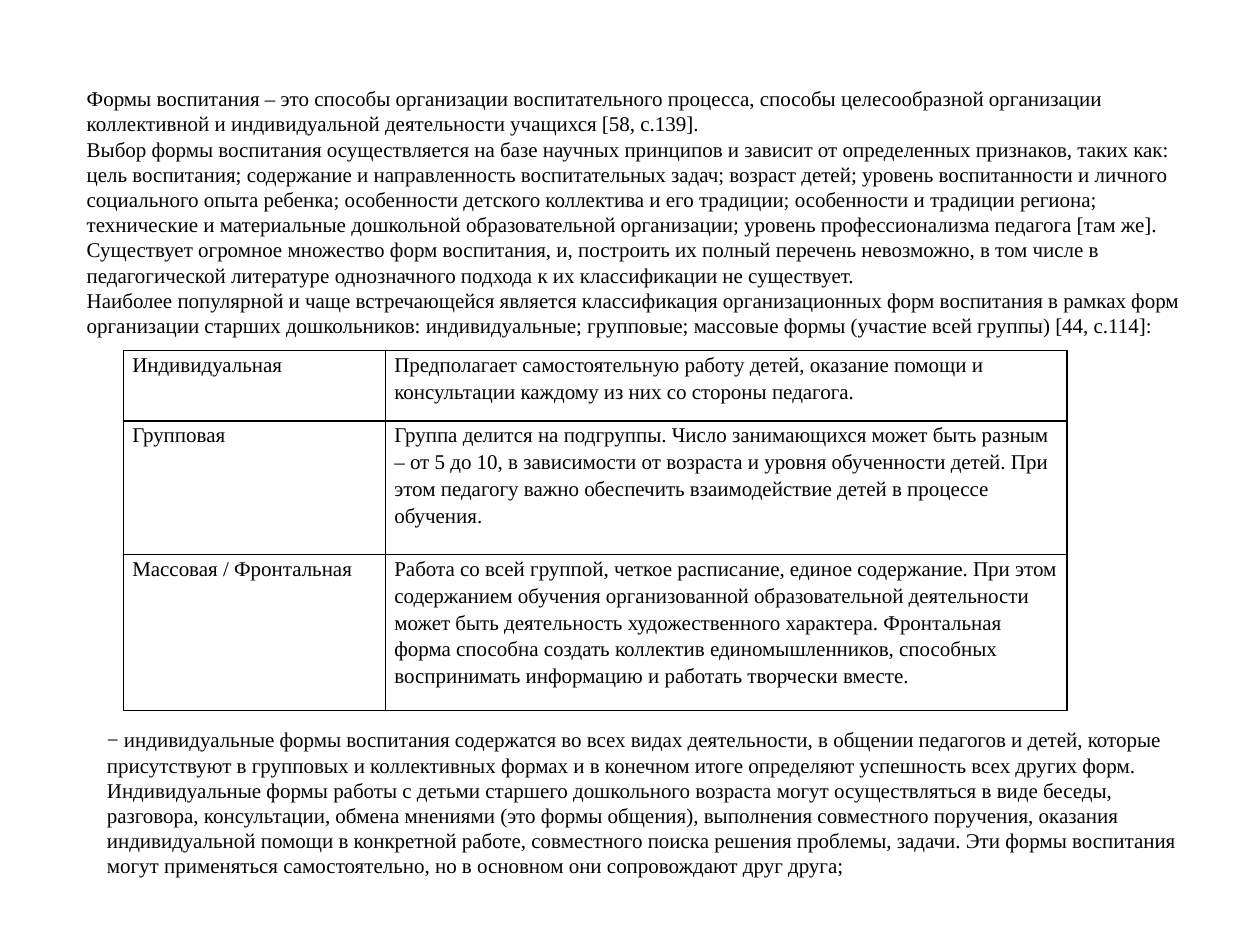
from dataclasses import dataclass

from lxml.etree import SubElement
from pptx import Presentation
from pptx.dml.color import RGBColor
from pptx.enum.text import MSO_ANCHOR, MSO_AUTO_SIZE
from pptx.oxml.ns import qn
from pptx.util import Inches, Pt


@dataclass(frozen=True)
class Theme:
    """Hold the colours, font and sizes of the slide."""

    font: str = "Times New Roman"
    size: float = 12
    ink: str = "000000"
    border_width: float = 1
    table_spacing: float = 1.15


THEME = Theme()

INTRODUCTION = [
    "Формы воспитания – это способы организации воспитательного процесса, способы целесообразной "
    "организации коллективной и индивидуальной деятельности учащихся [58, с.139].",
    "Выбор формы воспитания осуществляется на базе научных принципов и зависит от определенных "
    "признаков, таких как: цель воспитания; содержание и направленность воспитательных задач; "
    "возраст детей; уровень воспитанности и личного социального опыта ребенка; особенности "
    "детского коллектива и его традиции; особенности и традиции региона; технические и "
    "материальные дошкольной образовательной организации; уровень профессионализма педагога "
    "[там же].",
    "Существует огромное множество форм воспитания, и, построить их полный перечень невозможно, "
    "в том числе в педагогической литературе однозначного подхода к их классификации не существует.",
    "Наиболее популярной и чаще встречающейся является классификация организационных форм "
    "воспитания в рамках форм организации старших дошкольников: индивидуальные; групповые; "
    "массовые формы (участие всей группы) [44, с.114]:",
]

FORMS = [
    (
        "Индивидуальная",
        "Предполагает самостоятельную работу детей, оказание помощи и консультации каждому из них "
        "со стороны педагога.",
    ),
    (
        "Групповая",
        "Группа делится на подгруппы. Число занимающихся может быть разным – от 5 до 10, в "
        "зависимости от возраста и уровня обученности детей. При этом педагогу важно обеспечить "
        "взаимодействие детей в процессе обучения.",
    ),
    (
        "Массовая / Фронтальная",
        "Работа со всей группой, четкое расписание, единое содержание. При этом содержанием "
        "обучения организованной образовательной деятельности может быть деятельность "
        "художественного характера. Фронтальная форма способна создать коллектив "
        "единомышленников, способных воспринимать информацию и работать творчески вместе.",
    ),
]
COLUMN_WIDTHS = [2.08, 5.41]
ROW_HEIGHTS = [0.56, 1.06, 1.24]

CONCLUSION = [
    "− индивидуальные формы воспитания содержатся во всех видах деятельности, в общении педагогов "
    "и детей, которые присутствуют в групповых и коллективных формах и в конечном итоге "
    "определяют успешность всех других форм. Индивидуальные формы работы с детьми старшего "
    "дошкольного возраста могут осуществляться в виде беседы, разговора, консультации, обмена "
    "мнениями (это формы общения), выполнения совместного поручения, оказания индивидуальной "
    "помощи в конкретной работе, совместного поиска решения проблемы, задачи. Эти формы "
    "воспитания могут применяться самостоятельно, но в основном они сопровождают друг друга;",
]


def write_text(paragraph, text, *, size=THEME.size, color=THEME.ink, line_spacing=None):
    """Write one formatted run of text into a paragraph."""
    run = paragraph.add_run()
    run.text = text
    run.font.name = THEME.font
    run.font.size = Pt(size)
    run.font.color.rgb = RGBColor.from_string(color)
    if line_spacing:
        paragraph.line_spacing = line_spacing


def add_text_box(slide, left, top, width, height, texts, anchor=MSO_ANCHOR.TOP):
    """Add a wrapped text box with one paragraph per text."""
    shape = slide.shapes.add_textbox(Inches(left), Inches(top), Inches(width), Inches(height))
    frame = shape.text_frame
    frame.word_wrap = True
    frame.auto_size = MSO_AUTO_SIZE.SHAPE_TO_FIT_TEXT
    frame.vertical_anchor = anchor
    for index, text in enumerate(texts):
        paragraph = frame.add_paragraph() if index else frame.paragraphs[0]
        write_text(paragraph, text)


def set_borders(cell):
    """Draw a solid line on every side of a cell."""
    properties = cell._tc.get_or_add_tcPr()
    for position, side in enumerate(("lnL", "lnR", "lnT", "lnB")):
        line = SubElement(properties, qn(f"a:{side}"), w=str(Pt(THEME.border_width)))
        fill = SubElement(line, qn("a:solidFill"))
        SubElement(fill, qn("a:srgbClr"), val=THEME.ink)
        properties.insert(position, line)


def fill_cell(cell, text):
    """Format a table cell and write its text."""
    cell.margin_left = cell.margin_right = Inches(0.07)
    cell.margin_top = cell.margin_bottom = 0
    cell.fill.background()
    set_borders(cell)
    write_text(cell.text_frame.paragraphs[0], text, line_spacing=THEME.table_spacing)


def add_forms_table(slide, left, top):
    """Add the table of the forms and their descriptions."""
    table = slide.shapes.add_table(
        len(ROW_HEIGHTS), len(COLUMN_WIDTHS), Inches(left), Inches(top),
        Inches(sum(COLUMN_WIDTHS)), Inches(sum(ROW_HEIGHTS)),
    ).table
    table.first_row = table.horz_banding = False
    for column, width in zip(table.columns, COLUMN_WIDTHS):
        column.width = Inches(width)
    for row, height, texts in zip(table.rows, ROW_HEIGHTS, FORMS):
        row.height = Inches(height)
        for cell, text in zip(row.cells, texts):
            fill_cell(cell, text)


def main():
    """Build the slide and save the presentation."""
    presentation = Presentation()
    presentation.slide_width, presentation.slide_height = Inches(10), Inches(7.5)
    slide = presentation.slides.add_slide(presentation.slide_layouts[6])
    add_text_box(slide, 0.59, 0.62, 9.06, 2.12, INTRODUCTION, anchor=MSO_ANCHOR.MIDDLE)
    add_forms_table(slide, 0.98, 2.78)
    add_text_box(slide, 0.75, 5.72, 8.82, 1.31, CONCLUSION)
    presentation.save("out.pptx")


if __name__ == "__main__":
    main()
